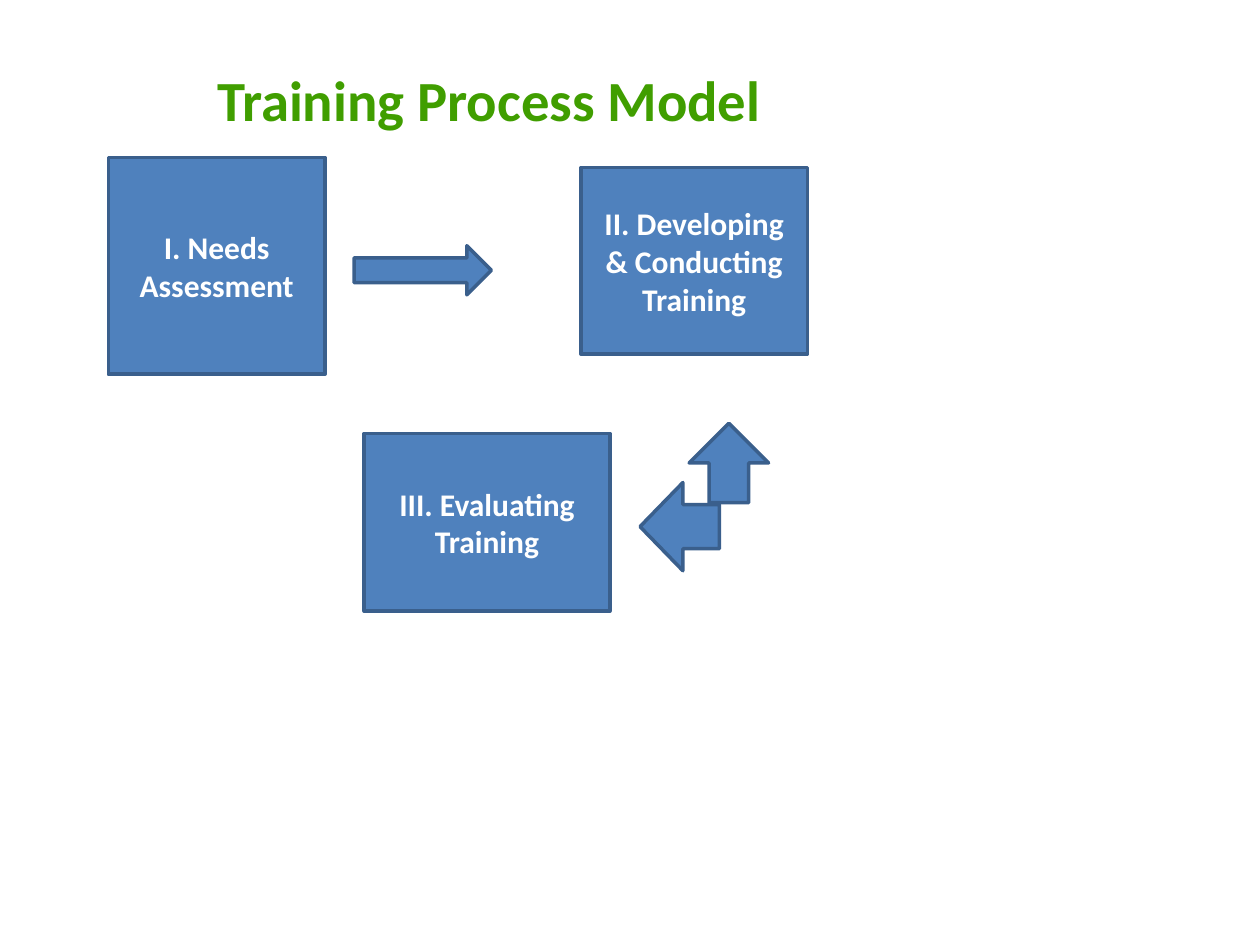
"""Build the training process model slide."""
from pptx import Presentation
from pptx.dml.color import RGBColor
from pptx.enum.shapes import MSO_SHAPE
from pptx.enum.text import MSO_ANCHOR, MSO_AUTO_SIZE, PP_ALIGN
from pptx.util import Inches, Pt

GREEN = RGBColor(0x40, 0x9E, 0x00)
BLUE = RGBColor(0x4F, 0x81, 0xBD)
NAVY = RGBColor(0x3A, 0x5F, 0x8C)
WHITE = RGBColor(0xFF, 0xFF, 0xFF)

TITLE = " Training Process Model"
TITLE_AT = (0.49, 0.47, 6.68, 0.63)
PARTS = [
    (MSO_SHAPE.RECTANGLE, (0.86, 1.25, 1.72, 1.72), "I. Needs Assessment", ()),
    (MSO_SHAPE.RIGHT_ARROW, (2.81, 1.95, 1.09, 0.39), "", ()),
    (MSO_SHAPE.RECTANGLE, (4.61, 1.33, 1.8, 1.48),
     "II. Developing & Conducting Training", ()),
    (MSO_SHAPE.RECTANGLE, (2.89, 3.44, 1.95, 1.41), "III. Evaluating Training", ()),
    (MSO_SHAPE.UP_ARROW, (5.47, 3.36, 0.63, 0.63), "", ()),
    (MSO_SHAPE.LEFT_ARROW, (5.08, 3.83, 0.63, 0.7), "", (0.5, 0.54)),
]


def write(shape, text, size=18, color=WHITE):
    frame = shape.text_frame
    frame.word_wrap = True
    frame.auto_size = MSO_AUTO_SIZE.NONE
    frame.vertical_anchor = MSO_ANCHOR.MIDDLE
    line = frame.paragraphs[0]
    line.alignment = PP_ALIGN.CENTER
    run = line.add_run()
    run.text = text
    font = run.font
    font.name, font.size, font.bold = "Calibri", Pt(size), True
    font.color.rgb = color


def draw(slide, kind, place, text, bends):
    shape = slide.shapes.add_shape(kind, *map(Inches, place))
    shape.shadow.inherit = False
    shape.fill.solid()
    shape.fill.fore_color.rgb = BLUE
    shape.line.color.rgb = NAVY
    shape.line.width = Pt(2)
    for i, bend in enumerate(bends):
        shape.adjustments[i] = bend
    if text:
        write(shape, text)


def main():
    deck = Presentation()
    deck.slide_width, deck.slide_height = Inches(10), Inches(7.5)
    slide = deck.slides.add_slide(deck.slide_layouts[5])
    title = slide.shapes.title
    title.left, title.top, title.width, title.height = map(Inches, TITLE_AT)
    write(title, TITLE, size=32.4, color=GREEN)
    for part in PARTS:
        draw(slide, *part)
    deck.save("out.pptx")


if __name__ == "__main__":
    main()
